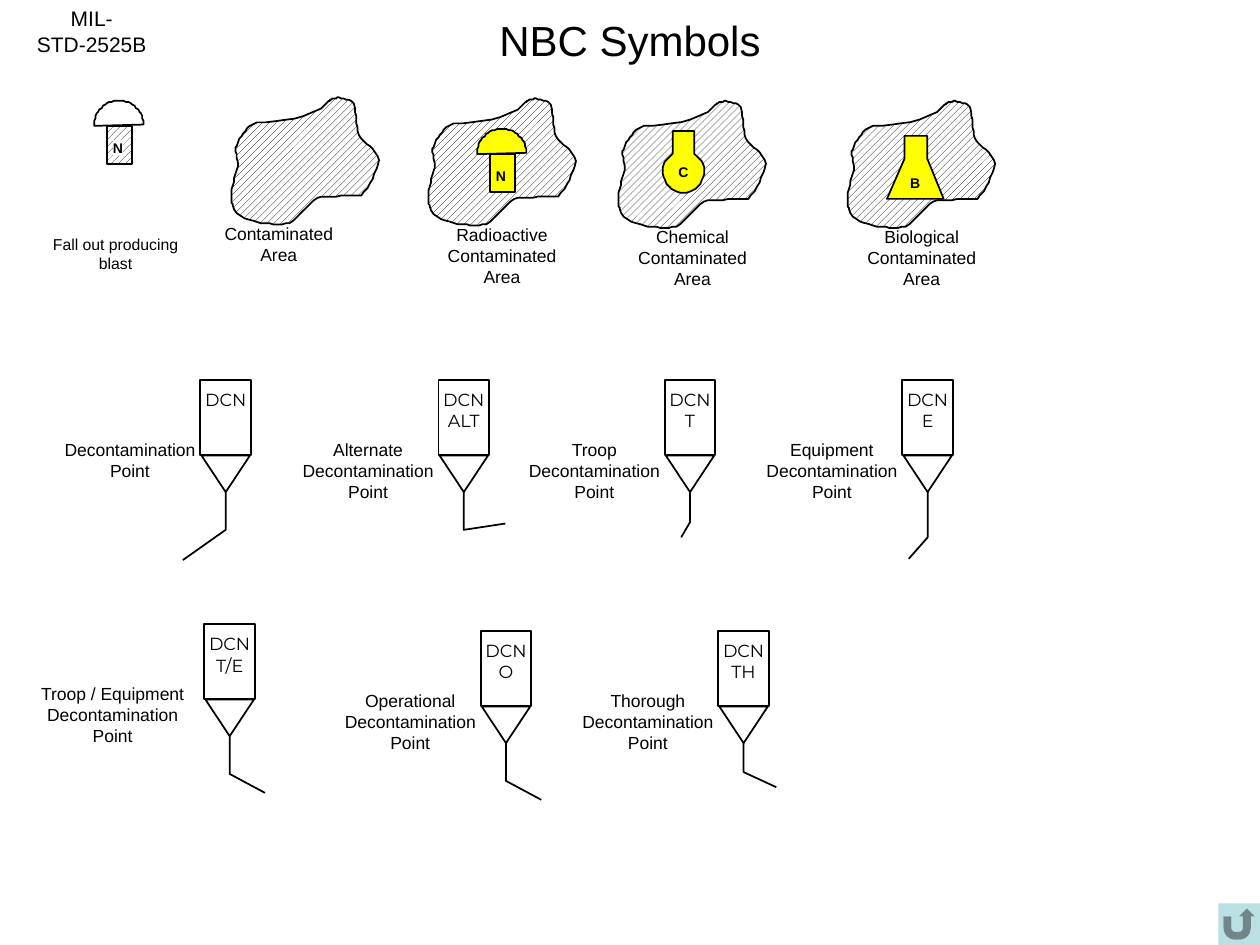
"""Build the NBC symbols slide."""
from dataclasses import dataclass
from math import asin, cos, pi, sin

from pptx import Presentation, util as u
from pptx.dml import color
from pptx.enum import dml, shapes, text

BLACK, WHITE, YELLOW, TEAL = "000000", "FFFFFF", "FFFF00", "BBE0E3"
HATCH = "hatch"
GRID = u.Cm(0.0254)
AREA_START = (76, 4)
AREA_CURVES = [
    ((63, 18), (38, 19), (20, 20)), ((14, 22), (10, 27), (6, 33)),
    ((2, 44), (3, 38), (5, 52)), ((4, 61), (1, 68), (0, 76)),
    ((0, 79), (0, 83), (1, 86)), ((3, 95), (16, 98), (23, 100)),
    ((32, 100), (42, 103), (49, 98)), ((55, 93), (64, 80), (71, 79)),
    ((82, 78), (93, 79), (103, 78)), ((110, 71), (114, 59), (117, 50)),
    ((114, 40), (106, 38), (101, 30)), ((98, 21), (100, 16), (97, 5)),
    ((96, 2), (86, 1), (84, 0)), ((83, 1), (81, 1), (80, 1)),
    ((79, 2), (76, 4), (76, 4)),
]


@dataclass
class Symbol:
    letter: str
    left: float
    top: float
    letter_x: float
    letter_y: float
    outlines: list
    fills: tuple


@dataclass
class Area:
    left: float
    top: float
    label: str
    label_x: float
    label_y: float
    symbol: Symbol | None = None


@dataclass
class DeconPoint:
    left: float
    top: float
    code: str
    label: str
    knee: int
    tip: tuple
    label_shift: float = -1.42


def arc(centre: tuple, radius: float, start: float, end: float, steps: int = 32) -> list:
    angles = [start + (end - start) * i / steps for i in range(steps + 1)]
    return [(centre[0] + radius * cos(a), centre[1] + radius * sin(a)) for a in angles]


def area_outline(steps: int = 8) -> list:
    points = [AREA_START]
    for first, second, end in AREA_CURVES:
        start = points[-1]
        for i in range(1, steps + 1):
            t = i / steps
            weights = ((1 - t) ** 3, 3 * t * (1 - t) ** 2, 3 * t * t * (1 - t), t ** 3)
            corners = (start, first, second, end)
            points.append(tuple(sum(w * c[axis] for w, c in zip(weights, corners))
                                for axis in (0, 1)))
    return points


def paint(target, hex_color: str) -> None:
    target.solid()
    target.fore_color.rgb = color.RGBColor.from_string(hex_color)


def style(shape, fill: str | None, outlined: bool = True) -> None:
    shape.shadow.inherit = False
    if fill is None:
        shape.fill.background()
    elif fill == HATCH:
        shape.fill.patterned()
        shape.fill.pattern = dml.MSO_PATTERN.WIDE_UPWARD_DIAGONAL
        shape.fill.fore_color.rgb = color.RGBColor.from_string(BLACK)
        shape.fill.back_color.rgb = color.RGBColor.from_string(WHITE)
    else:
        paint(shape.fill, fill)
    if outlined:
        paint(shape.line.fill, BLACK)
        shape.line.width = u.Pt(1)
    else:
        shape.line.fill.background()


def write(shape, words: str, size: float, font: str = "Arial", bold: bool = False,
          wrap: bool = False) -> None:
    frame = shape.text_frame
    frame.margin_left = frame.margin_right = frame.margin_top = frame.margin_bottom = 0
    frame.word_wrap = wrap
    frame.vertical_anchor = text.MSO_ANCHOR.MIDDLE
    frame.text = words
    for paragraph in frame.paragraphs:
        paragraph.alignment = text.PP_ALIGN.CENTER
        paragraph.font.name, paragraph.font.size = font, u.Pt(size)
        paragraph.font.bold = bold
        paint(paragraph.font.fill, BLACK)


def add_label(canvas, words: str, centre: float, top: float, size: float = 10,
              width: float = 3, font: str = "Arial", wrap: bool = False) -> None:
    height = u.Pt(size * 1.2 * (words.count("\n") + 1 + wrap))
    box = canvas.add_textbox(u.Cm(centre - width / 2), u.Cm(top), u.Cm(width), height)
    write(box, words, size, font, wrap=wrap)


def add_outline(canvas, points: list, left: float, top: float, fill: str | None,
                closed: bool = True) -> None:
    builder = canvas.build_freeform(*points[0], scale=GRID)
    builder.add_line_segments(points[1:], close=closed)
    style(builder.convert_to_shape(u.Cm(left), u.Cm(top)), fill)


def add_preset(canvas, kind, left: float, top: float, width: float, height: float,
               fill: str | None = None, outlined: bool = True):
    shape = canvas.add_shape(kind, u.Cm(left), u.Cm(top), u.Cm(width), u.Cm(height))
    style(shape, fill, outlined)
    return shape


def add_symbol(canvas, symbol: Symbol) -> None:
    parts = canvas.add_group_shape().shapes
    for outline, fill in zip(symbol.outlines, symbol.fills):
        add_outline(parts, outline, symbol.left, symbol.top, fill)
    backing = WHITE if HATCH in symbol.fills else YELLOW
    letter = add_preset(parts, shapes.MSO_SHAPE.RECTANGLE, symbol.left + symbol.letter_x - 0.1,
                        symbol.top + symbol.letter_y - 0.16, 0.2, 0.32, backing, False)
    write(letter, symbol.letter, 8, bold=True)


def add_area(canvas, area: Area) -> None:
    add_outline(canvas, area_outline(), area.left, area.top, HATCH)
    add_label(canvas, area.label, area.label_x, area.label_y)
    if area.symbol:
        add_symbol(canvas, area.symbol)


def add_decon_point(canvas, point: DeconPoint) -> None:
    parts = canvas.add_group_shape().shapes
    marker = add_preset(parts, shapes.MSO_SHAPE.ISOSCELES_TRIANGLE,
                        point.left + 0.02, point.top + 1.52, 0.98, 0.74)
    marker.rotation = 180
    add_preset(parts, shapes.MSO_SHAPE.RECTANGLE, point.left, point.top, 1.02, 1.52)
    centre = point.left + 0.51
    add_label(canvas, point.code, centre, point.top + 0.19, width=0.84, font="Montserrat")
    add_outline(canvas, [(0, 0), (0, point.knee), point.tip], centre, point.top + 2.26,
                None, closed=False)
    add_label(canvas, point.label, point.left + point.label_shift, point.top + 1.19)


DOME = arc((19.5, 19.5), 19.5, pi, 2 * pi)
STEM = [(9.5, 19.5), (9.5, 50), (29.5, 50), (29.5, 19.5)]
NECK = asin(8.5 / 16.5)
ROUND_FLASK = [(8, 0), *arc((16.5, 32.5), 16.5, 1.5 * pi - NECK, NECK - pi / 2), (25, 0)]
CONE_FLASK = [(14, 0), (14, 18), (0, 49.5), (45, 49.5), (32, 18), (32, 0)]

BLAST = Symbol("N", 1.9, 2.03, 0.48, 0.95, [DOME, STEM], (WHITE, HATCH))
NUCLEAR = Symbol("N", 9.62, 2.6, 0.48, 0.95, [DOME, STEM], (YELLOW, YELLOW))
CHEMICAL = Symbol("C", 13.36, 2.64, 0.42, 0.83, [ROUND_FLASK], (YELLOW,))
BIOLOGICAL = Symbol("B", 17.88, 2.74, 0.57, 0.95, [CONE_FLASK], (YELLOW,))
AREAS = [
    Area(4.67, 1.96, "Contaminated Area", 5.62, 4.7),
    Area(8.64, 1.98, "Radioactive\nContaminated Area", 10.12, 4.72, NUCLEAR),
    Area(12.47, 2.03, "Chemical\nContaminated Area", 13.96, 4.76, CHEMICAL),
    Area(17.09, 2.03, "Biological\nContaminated Area", 18.58, 4.76, BIOLOGICAL),
]
DECON_POINTS = [
    DeconPoint(4.04, 7.66, "DCN", "Decontamination\nPoint", 30, (-34, 54)),
    DeconPoint(8.84, 7.66, "DCN\nALT", "Alternate\nDecontamination\nPoint", 30, (33, 25)),
    DeconPoint(13.4, 7.66, "DCN\nT", "Troop\nDecontamination\nPoint", 24, (-7, 36)),
    DeconPoint(18.19, 7.66, "DCN\nE", "Equipment\nDecontamination\nPoint", 36, (-15, 53)),
    DeconPoint(9.69, 12.72, "DCN\nO", "Operational\nDecontamination\nPoint", 30, (28, 45)),
    DeconPoint(14.48, 12.72, "DCN\nTH", "Thorough\nDecontamination\nPoint", 23, (26, 35)),
    DeconPoint(4.12, 12.58, "DCN\nT/E", "Troop / Equipment\nDecontamination\nPoint",
               30, (28, 45), -1.85),
]


def main() -> None:
    deck = Presentation()
    deck.slide_width, deck.slide_height = u.Cm(25.4), u.Cm(19.05)
    canvas = deck.slides.add_slide(deck.slide_layouts[6]).shapes
    add_preset(canvas, shapes.MSO_SHAPE.ACTION_BUTTON_RETURN, 24.56, 18.21, 0.84, 0.84,
               TEAL, False)
    add_label(canvas, "NBC Symbols", 12.7, 0.3, size=24, width=5.28)
    add_label(canvas, "MIL-STD-2525B", 1.85, 0.12, size=12, width=3.05, wrap=True)
    add_symbol(canvas, BLAST)
    add_label(canvas, "Fall out producing\nblast", 2.33, 4.74, size=9)
    for area in AREAS:
        add_area(canvas, area)
    for point in DECON_POINTS:
        add_decon_point(canvas, point)
    deck.save("out.pptx")


if __name__ == "__main__":
    main()
